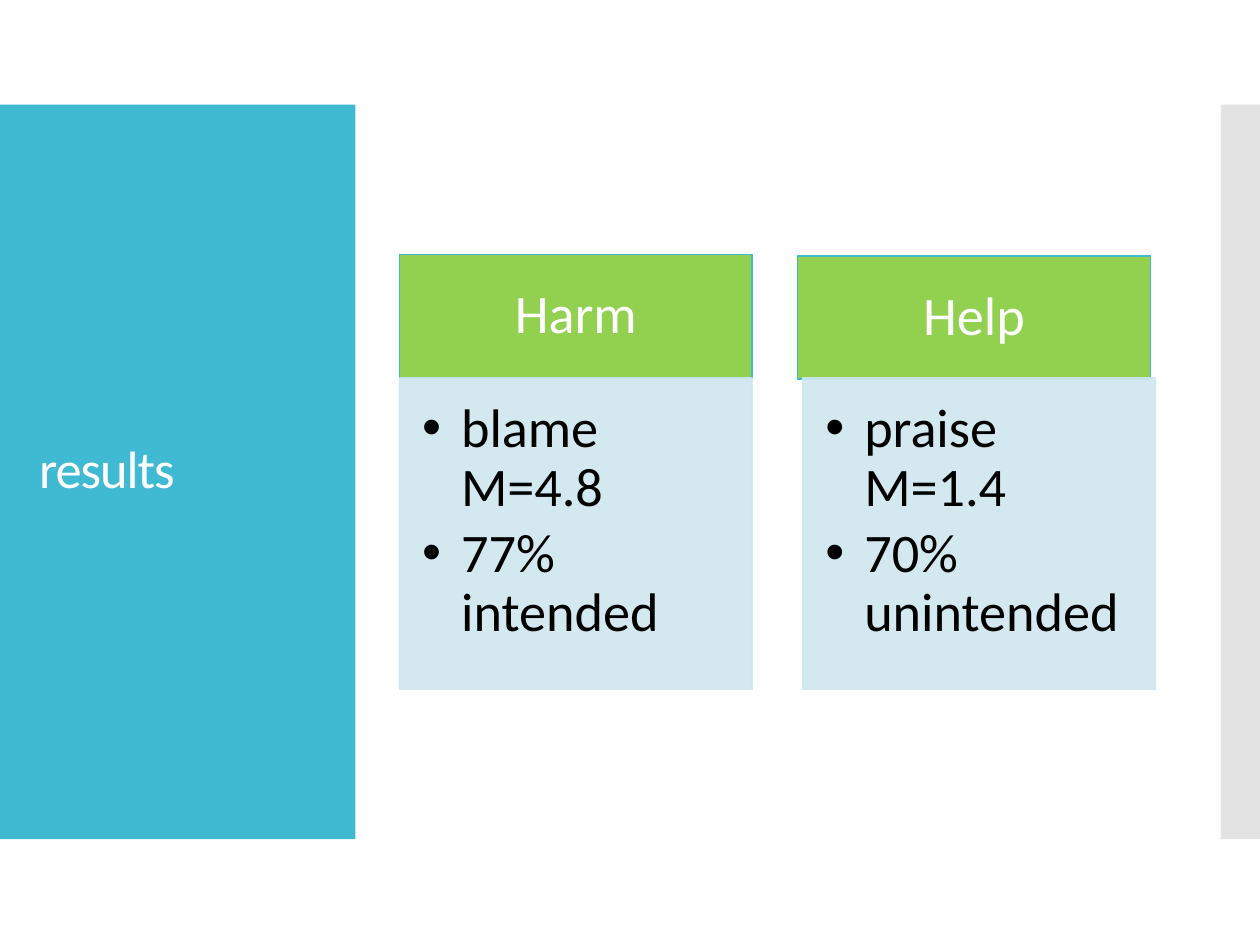
"""Build the results slide: a title panel and two columns comparing harm with help."""
from dataclasses import dataclass

from lxml import etree
from pptx import Presentation
from pptx.dml.color import RGBColor
from pptx.enum.shapes import MSO_SHAPE
from pptx.enum.text import MSO_ANCHOR, PP_ALIGN
from pptx.oxml.ns import qn
from pptx.util import Inches, Pt

RECT = MSO_SHAPE.RECTANGLE
TOP, MIDDLE = MSO_ANCHOR.TOP, MSO_ANCHOR.MIDDLE
LEFT, CENTER = PP_ALIGN.LEFT, PP_ALIGN.CENTER
TEAL, GREEN, PALE, GREY = "40BAD2", "92D050", "CFE7EE", "C8C8C8"
WHITE, BLACK = "FFFFFF", "000000"
WIDTH, HEAD, BODY, SPLIT = 2.8, 0.98, 2.47, 3.0
INDENT = 0.31


@dataclass
class Column:
    title: str
    items: list[str]
    head: tuple[float, float]
    left: float


@dataclass
class Style:
    size: float
    color: str
    align: int
    anchor: int
    insets: tuple[float, float, float, float]
    bullet: bool = False


TITLE = Style(30, WHITE, LEFT, MIDDLE, (0.31, 0.05, 0.29, 0.05))
HEADING = Style(31, WHITE, CENTER, MIDDLE, (0.24, 0.14, 0.24, 0.14))
LISTING = Style(31, BLACK, LEFT, TOP, (0.18, 0.18, 0.24, 0.27), True)

COLUMNS = [
    Column("Harm", ["blame M=4.8", "77% intended"], (3.17, 2.02), 3.17),
    Column("Help", ["praise M=1.4", "70% unintended"], (6.33, 2.03), 6.37),
]


def rgb(code: str) -> RGBColor:
    return RGBColor.from_string(code)


def paint(fill, color: str, alpha: int) -> None:
    fill.solid()
    fill.fore_color.rgb = rgb(color)
    if alpha < 100:
        node = fill._xPr.find(qn("a:solidFill"))[0]
        etree.SubElement(node, qn("a:alpha"), val=str(alpha * 1000))


def add_box(slide, at: tuple[float, float, float, float], fill: str,
            line: str = "", alpha: int = 100):
    box = slide.shapes.add_shape(RECT, *map(Inches, at))
    box.shadow.inherit = False
    paint(box.fill, fill, alpha)
    if line:
        paint(box.line.fill, line, alpha)
        box.line.width = Pt(0.85)
    else:
        box.line.fill.background()
    return box


def add_bullet(para) -> None:
    para.level = 1
    para.space_after = Pt(4.5)
    props = para._p.get_or_add_pPr()
    props.set("marL", str(Inches(INDENT)))
    props.set("indent", str(-Inches(INDENT)))
    etree.SubElement(props, qn("a:buFont"), typeface="Arial")
    etree.SubElement(props, qn("a:buChar"), char="•")


def write(box, lines: list[str], style: Style) -> None:
    frame = box.text_frame
    left, top, right, bottom = map(Inches, style.insets)
    values = {"margin_left": left, "margin_top": top, "margin_right": right,
              "margin_bottom": bottom, "vertical_anchor": style.anchor,
              "word_wrap": True}
    for name, value in values.items():
        setattr(frame, name, value)
    frame.text = "\n".join(lines)
    for para in frame.paragraphs:
        para.alignment = style.align
        para.line_spacing = 0.9
        if style.bullet:
            add_bullet(para)
        font = para.runs[0].font
        font.name, font.size = "Calibri", Pt(style.size)
        font.color.rgb = rgb(style.color)


def add_column(slide, col: Column) -> None:
    head = add_box(slide, (*col.head, WIDTH, HEAD), GREEN, TEAL)
    write(head, [col.title], HEADING)
    body = add_box(slide, (col.left, SPLIT, WIDTH, BODY), PALE, PALE, 90)
    write(body, col.items, LISTING)


def main() -> None:
    deck = Presentation()
    deck.slide_width, deck.slide_height = Inches(10), Inches(7.5)
    slide = deck.slides.add_slide(deck.slide_layouts[6])
    panel = add_box(slide, (0, 0.83, 2.82, 5.83), TEAL)
    write(panel, ["results"], TITLE)
    panel.text_frame.paragraphs[0].runs[0].font._element.set("spc", "-60")
    add_box(slide, (9.69, 0.83, 0.31, 5.83), GREY, alpha=50)
    for col in COLUMNS:
        add_column(slide, col)
    deck.save("out.pptx")


if __name__ == "__main__":
    main()
